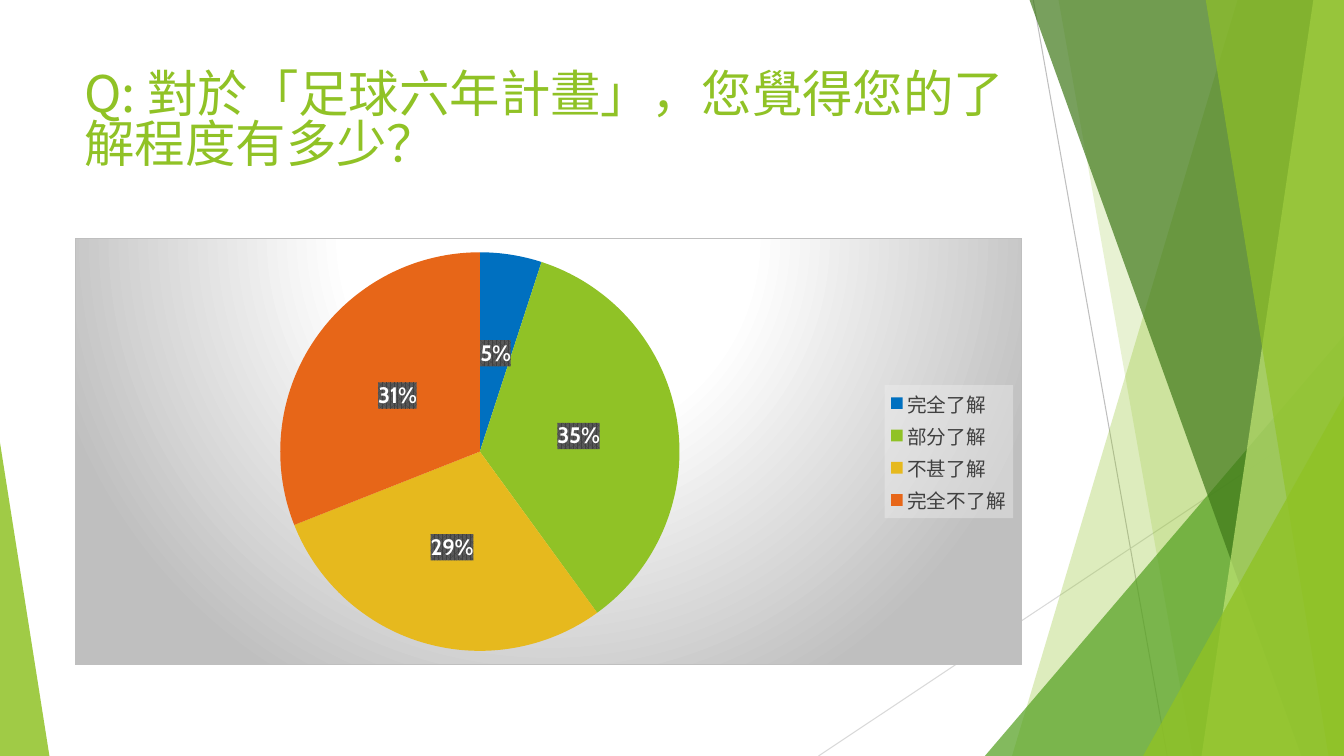
from dataclasses import dataclass
from typing import Any

import pptx
import pptx.chart.data
import pptx.dml.color
import pptx.enum.chart
import pptx.enum.shapes
import pptx.enum.text
import pptx.oxml
import pptx.oxml.ns
import pptx.oxml.xmlchemy
import pptx.util

WIDTH, HEIGHT = pptx.util.Inches(13.33), pptx.util.Inches(7.5)
GREEN, GREY = "90C226", "BFBFBF"
LATIN, CHINESE = "Cabin", "Noto Sans CJK SC"
DRAWING = 'xmlns:a="http://schemas.openxmlformats.org/drawingml/2006/main"'


@dataclass(frozen=True)
class Ray:
    """A thin line; positions are percent of the slide's width and height."""
    start: tuple[float, float]
    end: tuple[float, float]
    color: str


@dataclass(frozen=True)
class Shard:
    """A full-height panel that reaches from a slanted edge to the right side."""
    top_x: float
    bottom_x: float
    color: str
    opacity: int


@dataclass(frozen=True)
class Wedge:
    """A right triangle standing on the bottom edge, its apex at left (0) or right (1)."""
    left: float
    top: float
    width: float
    apex: int
    color: str
    opacity: int


@dataclass(frozen=True)
class Answer:
    label: str
    percent: int
    color: str


RAYS = [Ray((76.88, 0), (86.85, 100), GREY), Ray((100, 53.73), (60.9, 100), "D9D9D9")]
FACETS = [
    Shard(92.1, 75.3, GREEN, 30),
    Shard(78.75, 88.73, GREEN, 20),
    Wedge(73.28, 44.4, 26.72, 1, "54A021", 72),
    Shard(76.58, 96.83, "3F7819", 70),
    Shard(97.73, 89.4, "C0E474", 70),
    Shard(89.7, 98.85, GREEN, 65),
    Wedge(85.05, 52.4, 14.95, 1, GREEN, 80),
    Wedge(0, 58.53, 3.68, 0, GREEN, 85),
]
ANSWERS = [
    Answer("完全了解", 5, "0070C0"),
    Answer("部分了解", 35, GREEN),
    Answer("不甚了解", 29, "E6B91E"),
    Answer("完全不了解", 31, "E76618"),
]
CONTENT_LEFT, CONTENT_WIDTH = 5.55, 70.5

CHART_FILL = f"""<a:gradFill {DRAWING} rotWithShape="1"><a:gsLst>
<a:gs pos="0"><a:srgbClr val="FFFFFF"/></a:gs><a:gs pos="39000"><a:srgbClr val="FFFFFF"/></a:gs>
<a:gs pos="100000"><a:srgbClr val="{GREY}"/></a:gs></a:gsLst>
<a:path path="circle"><a:fillToRect l="50000" t="-80000" r="50000" b="180000"/></a:path></a:gradFill>"""
CHART_BORDER = f"""<a:ln {DRAWING} w="9525"><a:solidFill><a:srgbClr val="{GREY}"/></a:solidFill></a:ln>"""
LEGEND_FILL = f"""<a:solidFill {DRAWING}><a:srgbClr val="F2F2F2"><a:alpha val="39000"/></a:srgbClr></a:solidFill>"""
LABEL_FILL = f"""<a:pattFill {DRAWING} prst="pct75"><a:fgClr><a:srgbClr val="404040"/></a:fgClr>
<a:bgClr><a:srgbClr val="595959"/></a:bgClr></a:pattFill>"""


def across(percent: float) -> int:
    return round(WIDTH * percent / 100)


def down(percent: float) -> int:
    return round(HEIGHT * percent / 100)


def rgb(color: str) -> Any:
    return pptx.dml.color.RGBColor.from_string(color)


def element(tag: str) -> Any:
    return pptx.oxml.xmlchemy.OxmlElement(tag)


def apply(target: Any, formats: dict[str, Any]) -> None:
    for name, value in formats.items():
        setattr(target, name, value)


def style_font(font: Any, size: float, color: str, name: str = LATIN, bold: bool = False) -> None:
    apply(font, {"size": pptx.util.Pt(size), "name": name, "bold": bold})
    font.color.rgb = rgb(color)


def add_chart_look(part: Any, followers: tuple[str, ...], *looks: str) -> None:
    """Insert shape properties into a chart part, ahead of the elements that must follow them."""
    properties = element("c:spPr")
    for look in looks:
        properties.append(pptx.oxml.parse_xml(look))
    part.insert_element_before(properties, *followers)


def draw_ray(page: Any, ray: Ray) -> None:
    line = page.shapes.add_connector(
        pptx.enum.shapes.MSO_CONNECTOR.STRAIGHT,
        across(ray.start[0]), down(ray.start[1]), across(ray.end[0]), down(ray.end[1]))
    line.line.color.rgb = rgb(ray.color)
    line.line.width = pptx.util.Pt(0.75)
    properties = line._element.find(pptx.oxml.ns.qn("p:spPr"))
    properties.append(element("a:effectLst"))


def draw_facet(page: Any, facet: Shard | Wedge) -> None:
    if isinstance(facet, Shard):
        top = down(-0.13)
        outline = page.shapes.build_freeform(across(facet.top_x), top)
        outline.add_line_segments([(WIDTH, top), (WIDTH, HEIGHT), (across(facet.bottom_x), HEIGHT)])
        shape = outline.convert_to_shape()
    else:
        shape = page.shapes.add_shape(
            pptx.enum.shapes.MSO_SHAPE.ISOSCELES_TRIANGLE, across(facet.left), down(facet.top),
            across(facet.width), down(100 - facet.top))
        shape.adjustments[0] = facet.apex
    shape.shadow.inherit = False
    shape.line.fill.background()
    shape.fill.solid()
    shape.fill.fore_color.rgb = rgb(facet.color)
    alpha = element("a:alpha")
    alpha.set("val", str(facet.opacity * 1000))
    shape._element.spPr.find(".//" + pptx.oxml.ns.qn("a:srgbClr")).append(alpha)


def draw_question(page: Any, question: str) -> None:
    box = page.shapes.add_textbox(
        across(CONTENT_LEFT), down(8.93), across(CONTENT_WIDTH), down(19.2))
    apply(box.text_frame, {"word_wrap": True, "vertical_anchor": pptx.enum.text.MSO_ANCHOR.TOP})
    para = box.text_frame.paragraphs[0]
    para.line_spacing = 0.83
    span = para.add_run()
    span.text = question
    style_font(span.font, 36, GREEN, CHINESE)
    east_asian = element("a:ea")
    east_asian.set("typeface", CHINESE)
    span.font._element.append(east_asian)


def draw_answers(page: Any, answers: list[Answer]) -> None:
    data = pptx.chart.data.CategoryChartData()
    data.categories = [answer.label for answer in answers]
    data.add_series("Series 1", [answer.percent for answer in answers])
    chart = page.shapes.add_chart(
        pptx.enum.chart.XL_CHART_TYPE.PIE, across(CONTENT_LEFT), down(31.47),
        across(CONTENT_WIDTH), down(56.53), data).chart
    style_font(chart.font, 10, "000000")
    apply(chart, {"has_title": False, "has_legend": True})
    add_chart_look(chart._chartSpace, ("c:txPr", "c:externalData"), CHART_FILL, CHART_BORDER)

    apply(chart.legend, {
        "position": pptx.enum.chart.XL_LEGEND_POSITION.RIGHT, "include_in_layout": False})
    style_font(chart.legend.font, 14, "404040")
    add_chart_look(chart.legend._element, ("c:txPr",), LEGEND_FILL)

    plot = chart.plots[0]
    plot.vary_by_categories = True
    series = plot.series[0]
    for index, answer in enumerate(answers):
        fill = series.points[index].format.fill
        fill.solid()
        fill.fore_color.rgb = rgb(answer.color)
    labels = series.data_labels
    apply(labels, {
        "show_percentage": True, "show_value": False, "number_format": "0%",
        "number_format_is_linked": False,
        "position": pptx.enum.chart.XL_LABEL_POSITION.CENTER})
    style_font(labels.font, 16, "FFFFFF", bold=True)
    add_chart_look(labels._element, ("c:txPr",), LABEL_FILL)


def main() -> None:
    deck = pptx.Presentation()
    apply(deck, {"slide_width": WIDTH, "slide_height": HEIGHT})
    page = deck.slides.add_slide(deck.slide_layouts[6])
    for ray in RAYS:
        draw_ray(page, ray)
    for facet in FACETS:
        draw_facet(page, facet)
    draw_question(page, "Q: 對於「足球六年計畫」，您覺得您的了解程度有多少？")
    draw_answers(page, ANSWERS)
    deck.save("out.pptx")


if __name__ == "__main__":
    main()
